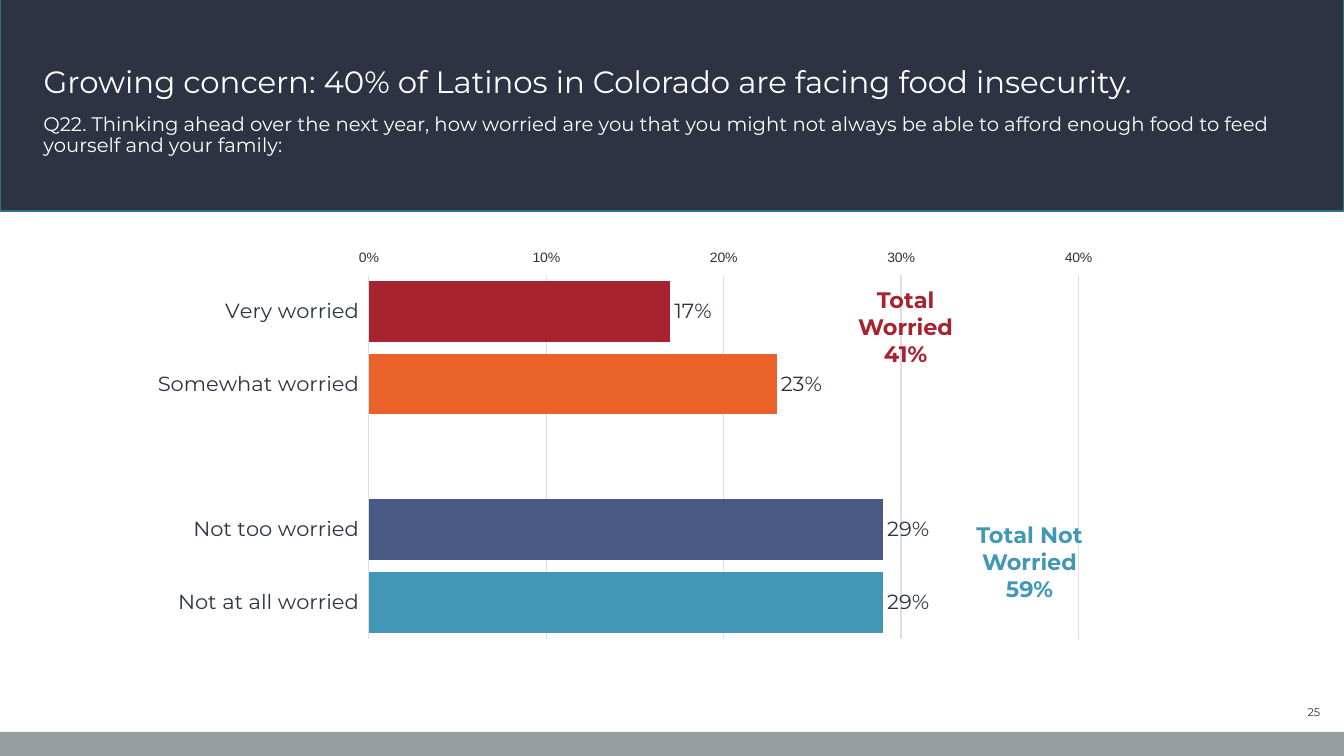
from dataclasses import dataclass

from lxml.etree import SubElement
from pptx import Presentation
from pptx.chart.data import CategoryChartData
from pptx.dml.color import RGBColor
from pptx.enum.chart import XL_AXIS_CROSSES, XL_CHART_TYPE, XL_LABEL_POSITION, XL_TICK_MARK
from pptx.enum.shapes import MSO_SHAPE
from pptx.enum.text import MSO_ANCHOR, MSO_AUTO_SIZE, PP_ALIGN
from pptx.oxml.ns import qn
from pptx.util import Emu, Pt


@dataclass(frozen=True)
class Theme:
    """Colours, fonts and type sizes of the slide."""
    navy: str = "2D3342"
    navy_edge: str = "327087"
    grey: str = "989DA0"
    white: str = "FFFFFF"
    grid: str = "DBDFE7"
    red: str = "A82230"
    orange: str = "E8622A"
    indigo: str = "485A84"
    teal: str = "4397B6"
    font: str = "Montserrat"
    axis_font: str = "Arial"
    title_size: int = 22
    total_size: int = 16
    label_size: int = 15
    question_size: int = 14
    axis_size: int = 10
    number_size: int = 8


class SlideBuilder:
    """Draws styled elements on one slide, with lengths in px."""
    PX = 9525

    def __init__(self, deck, theme):
        self.theme = theme
        self.slide = deck.slides.add_slide(deck.slide_layouts.get_by_name("Title Only"))

    def lengths(self, area):
        return [Emu(value * self.PX) for value in area]

    def style_font(self, font, size, color, bold=False, name=None):
        font.name = name or self.theme.font
        font.size = Pt(size)
        font.bold = bold
        font.color.rgb = RGBColor.from_string(color)

    def style_text(self, box, text, size, color, align, anchor, bold=False, spacing=None):
        frame = box.text_frame
        frame.text = text
        frame.word_wrap = True
        frame.vertical_anchor = anchor
        for para in frame.paragraphs:
            para.alignment = align
            para.line_spacing = spacing
            for span in para.runs:
                self.style_font(span.font, size, color, bold)

    def band(self, area, fill, edge=None):
        band = self.slide.shapes.add_shape(MSO_SHAPE.RECTANGLE, *self.lengths(area))
        band.shadow.inherit = False
        band.fill.solid()
        band.fill.fore_color.rgb = RGBColor.from_string(fill)
        if edge:
            band.line.color.rgb = RGBColor.from_string(edge)
            band.line.width = Pt(1)
        else:
            band.line.fill.background()

    def title(self, area, text):
        title = self.slide.shapes.title
        self.slide.shapes.element.append(title.element)
        title.left, title.top, title.width, title.height = self.lengths(area)
        self.style_text(title, text, self.theme.title_size, self.theme.white,
                        PP_ALIGN.LEFT, MSO_ANCHOR.BOTTOM, spacing=0.9)
        title.text_frame.auto_size = MSO_AUTO_SIZE.NONE

    def text(self, area, text, size, color, align=PP_ALIGN.LEFT, anchor=MSO_ANCHOR.TOP, **style):
        box = self.slide.shapes.add_textbox(*self.lengths(area))
        self.style_text(box, text, size, color, align, anchor, **style)
        return box

    def total(self, area, text, color):
        box = self.text(area, text, self.theme.total_size, color, PP_ALIGN.CENTER, bold=True)
        box.text_frame.auto_size = MSO_AUTO_SIZE.SHAPE_TO_FIT_TEXT

    def bar_chart(self, area, bars, plot_area):
        theme = self.theme
        data = CategoryChartData(number_format="0%")
        data.categories = [name for name, _, _ in bars]
        data.add_series("Series 1", [value for _, value, _ in bars])
        chart = self.slide.shapes.add_chart(
            XL_CHART_TYPE.BAR_CLUSTERED, *self.lengths(area), data).chart
        chart.has_title = False
        chart.has_legend = False
        self.style_font(chart.font, theme.axis_size, theme.navy)
        self.style_axes(chart)
        self.place_plot(chart, plot_area)

        plot = chart.plots[0]
        plot.gap_width = 20
        plot.vary_by_categories = False
        series = plot.series[0]
        series.format.fill.solid()
        series.format.fill.fore_color.rgb = RGBColor.from_string(theme.teal)
        for index, (_, value, color) in enumerate(bars):
            if value is not None:
                fill = series.points[index].format.fill
                fill.solid()
                fill.fore_color.rgb = RGBColor.from_string(color)

        labels = series.data_labels
        labels.show_value = True
        labels.number_format = "0%"
        labels.number_format_is_linked = False
        labels.position = XL_LABEL_POSITION.OUTSIDE_END
        self.style_font(labels.font, theme.label_size, theme.navy)

    def style_axes(self, chart):
        theme = self.theme
        names, values = chart.category_axis, chart.value_axis
        for axis in (names, values):
            axis.major_tick_mark = XL_TICK_MARK.OUTSIDE
            axis.format.line.fill.background()
        names.reverse_order = True
        names.crosses = XL_AXIS_CROSSES.MAXIMUM
        self.style_font(names.tick_labels.font, theme.label_size, theme.navy)

        values.minimum_scale, values.maximum_scale, values.major_unit = 0, 0.4, 0.1
        values.tick_labels.number_format = "0%"
        values.tick_labels.number_format_is_linked = False
        self.style_font(values.tick_labels.font, theme.axis_size, theme.navy, name=theme.axis_font)
        grid = values.major_gridlines.format.line
        grid.color.rgb = RGBColor.from_string(theme.grid)
        grid.width = Pt(0.75)

    def place_plot(self, chart, plot_area):
        plot = chart.element.find(".//" + qn("c:plotArea"))
        for old in plot.findall(qn("c:layout")):
            plot.remove(old)
        layout = SubElement(plot, qn("c:layout"))
        plot.insert(0, layout)
        manual = SubElement(layout, qn("c:manualLayout"))
        settings = [("layoutTarget", "inner"), ("xMode", "edge"), ("yMode", "edge")]
        settings += zip("xywh", plot_area)
        for tag, value in settings:
            SubElement(manual, qn("c:" + tag)).set("val", str(value))


def main():
    """Build and save the food insecurity slide."""
    theme = Theme()
    deck = Presentation()
    deck.slide_width = Emu(1280 * SlideBuilder.PX)
    deck.slide_height = Emu(720 * SlideBuilder.PX)
    page = SlideBuilder(deck, theme)

    page.band((0, -3, 1280, 204), theme.navy, theme.navy_edge)
    page.band((0, 697, 1280, 23), theme.grey)
    page.text((1192, 667, 75, 23), "25", theme.number_size, theme.navy,
              PP_ALIGN.RIGHT, MSO_ANCHOR.MIDDLE)
    page.title((32, 7, 1214, 93),
               "Growing concern: 40% of Latinos in Colorado are facing food insecurity.")
    page.text((32, 104, 1214, 88),
              "Q22. Thinking ahead over the next year, how worried are you that you might "
              "not always be able to afford enough food to feed yourself and your family:",
              theme.question_size, theme.white, spacing=0.9)
    bars = [
        ("Very worried", 0.17, theme.red),
        ("Somewhat worried", 0.23, theme.orange),
        ("", None, None),
        ("Not too worried", 0.29, theme.indigo),
        ("Not at all worried", 0.29, theme.teal),
    ]
    page.bar_chart((95, 238, 971, 398), bars, (0.264, 0.033, 0.696, 0.896))
    page.total((911, 492, 139, 87), "Total Not Worried\v59%", theme.teal)
    page.total((793, 268, 139, 87), "Total Worried\v41%", theme.red)
    deck.save("out.pptx")


if __name__ == "__main__":
    main()
